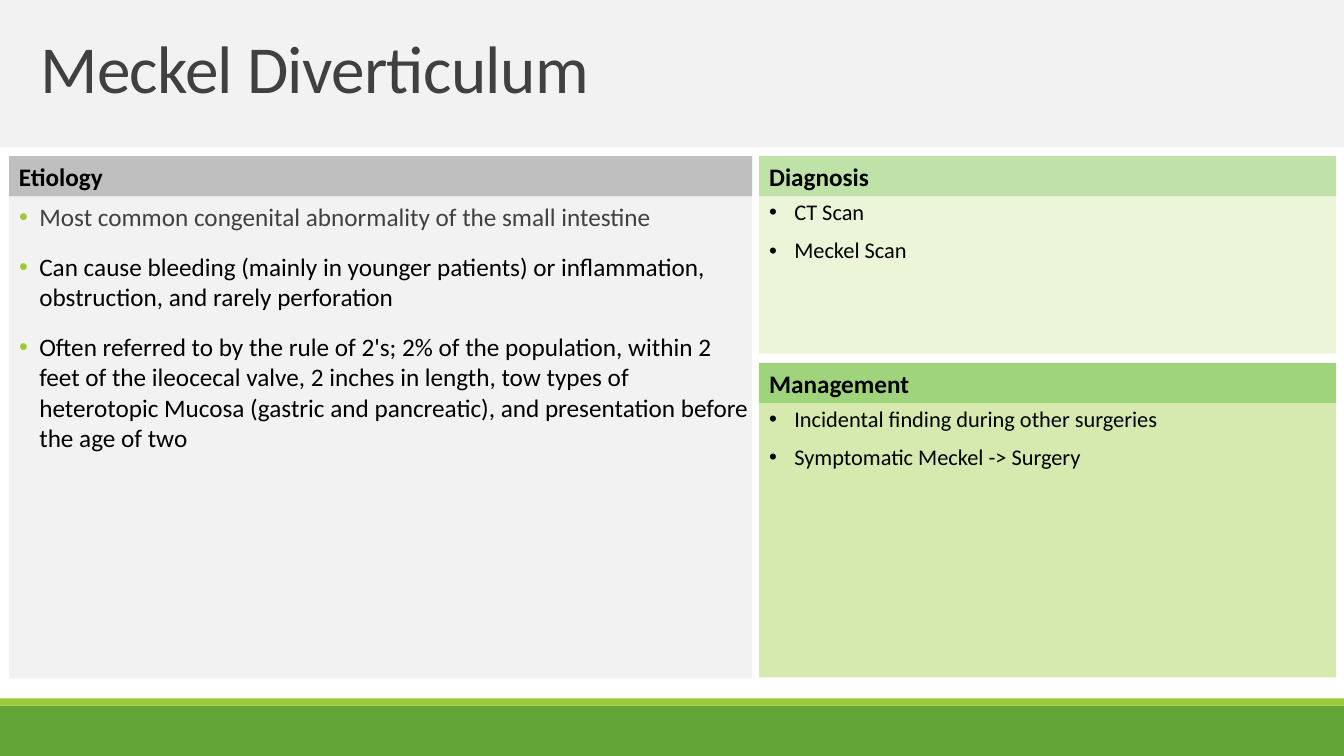
"""Build the Meckel Diverticulum slide with its three titled panels."""
import pptx
import pptx.chart.data
import pptx.dml.color
import pptx.enum.shapes
import pptx.enum.text
import pptx.oxml
import pptx.oxml.ns
import pptx.util

TITLE = "Meckel Diverticulum"
CAUSES = [
    "Most common congenital abnormality of the small intestine",
    "Can cause bleeding (mainly in younger patients) or inflammation, "
    "obstruction, and rarely perforation",
    "Often referred to by the rule of 2's; 2% of the population, within 2 feet "
    "of the ileocecal valve, 2 inches in length, tow types of heterotopic Mucosa "
    "(gastric and pancreatic), and presentation before the age of two",
]
CARDS = [
    {"head": "Diagnosis", "items": ["CT Scan", "Meckel Scan"],
     "top": 1.55, "tall": 1.56, "dark": "BFE2A8", "pale": "EBF5D7"},
    {"head": "Management",
     "items": ["Incidental finding during other surgeries",
               "Symptomatic Meckel -> Surgery"],
     "top": 3.6, "tall": 2.72, "dark": "9FD47D", "pale": "D6EAAF"},
]
THEME = {
    "font": "Calibri", "title": 48, "head": 18, "body": 18, "item": 16,
    "ink": "000000", "soft": "404040", "pale": "F2F2F2", "gray": "BFBFBF",
    "green": "63A537", "lime": "99CB38",
}
WIDE, HIGH = 13.33, 7.5
HEAD = 0.4
LEFT = {"x": 0.09, "wide": 7.37}
RIGHT = {"x": 7.53, "wide": 5.72}

Inches, Pt = pptx.util.Inches, pptx.util.Pt
ALIGN = pptx.enum.text.PP_ALIGN
ANCHOR = pptx.enum.text.MSO_ANCHOR


def tint(fill, color):
    fill.solid()
    fill.fore_color.rgb = pptx.dml.color.RGBColor.from_string(color)


def place(shape, x, y, wide, tall, color):
    shape.left, shape.top = Inches(x), Inches(y)
    shape.width, shape.height = Inches(wide), Inches(tall)
    tint(shape.fill, color)


def rect(slide, x, y, wide, tall, color):
    kind = pptx.enum.shapes.MSO_SHAPE.RECTANGLE
    shape = slide.shapes.add_shape(kind, 0, 0, 0, 0)
    place(shape, x, y, wide, tall, color)
    shape.line.fill.background()
    shape.shadow.inherit = False
    return shape


def write(shape, lines, size, anchor, color=THEME["ink"], bold=False):
    frame = shape.text_frame
    frame.text = "\n".join(lines)
    frame.word_wrap = True
    frame.auto_size = pptx.enum.text.MSO_AUTO_SIZE.NONE
    frame.vertical_anchor = anchor
    for para in frame.paragraphs:
        para.alignment = ALIGN.LEFT
        for run in para.runs:
            run.font.name, run.font.size = THEME["font"], Pt(size)
            run.font.bold = bold
            tint(run.font.fill, color)
    return frame


def indent(para, left, first):
    props = para._p.get_or_add_pPr()
    props.set("marL", str(Inches(left)))
    props.set("indent", str(Inches(first)))
    return props


def bullets(frame, left, hang, before, after, space, color):
    space_name = pptx.oxml.ns.nsdecls("a")
    for i, para in enumerate(frame.paragraphs):
        props = indent(para, left, -hang)
        for mark in (
            f'<a:buClr {space_name}><a:srgbClr val="{color}"/></a:buClr>',
            f'<a:buFont {space_name} typeface="Arial"/>',
            f'<a:buChar {space_name} char="•"/>',
        ):
            props.append(pptx.oxml.parse_xml(mark))
        para.space_before = Pt(before if i else 0)
        para.space_after = Pt(after)
        para.line_spacing = space


def header(slide, text, x, y, wide, color):
    shape = rect(slide, x, y, wide, HEAD, color)
    write(shape, [text], THEME["head"], ANCHOR.MIDDLE, bold=True)


def main():
    deck = pptx.Presentation()
    deck.slide_width, deck.slide_height = Inches(WIDE), Inches(HIGH)
    slide = deck.slides.add_slide(deck.slide_layouts[1])

    rect(slide, 0, 7, WIDE, 0.5, THEME["green"])
    rect(slide, 0, 6.93, WIDE, 0.07, THEME["lime"])

    title = slide.shapes.title
    place(title, 0, -0.01, WIDE, 1.47, THEME["pale"])
    frame = write(title, [TITLE], THEME["title"], ANCHOR.MIDDLE, THEME["soft"])
    para = frame.paragraphs[0]
    indent(para, 0, 0.3)
    para.line_spacing = 0.85
    para.runs[0].font._element.set("spc", "-50")

    top = CARDS[0]["top"]
    body = slide.placeholders[1]
    place(body, LEFT["x"], top + HEAD, LEFT["wide"], 4.78, THEME["pale"])
    frame = write(body, CAUSES, THEME["body"], ANCHOR.TOP)
    frame.margin_left = frame.margin_right = 0
    bullets(frame, 0.3, 0.2, 12, 2, 1.0, THEME["lime"])
    tint(frame.paragraphs[0].runs[0].font.fill, THEME["soft"])
    header(slide, "Etiology", LEFT["x"], top, LEFT["wide"], THEME["gray"])

    for card in CARDS:
        x, y, wide = RIGHT["x"], card["top"], RIGHT["wide"]
        panel = rect(slide, x, y + HEAD, wide, card["tall"], card["pale"])
        frame = write(panel, card["items"], THEME["item"], ANCHOR.TOP)
        bullets(frame, 0.25, 0.25, 10, 0, 0.9, THEME["ink"])
        header(slide, card["head"], x, y, wide, card["dark"])

    deck.save("out.pptx")


if __name__ == "__main__":
    main()
